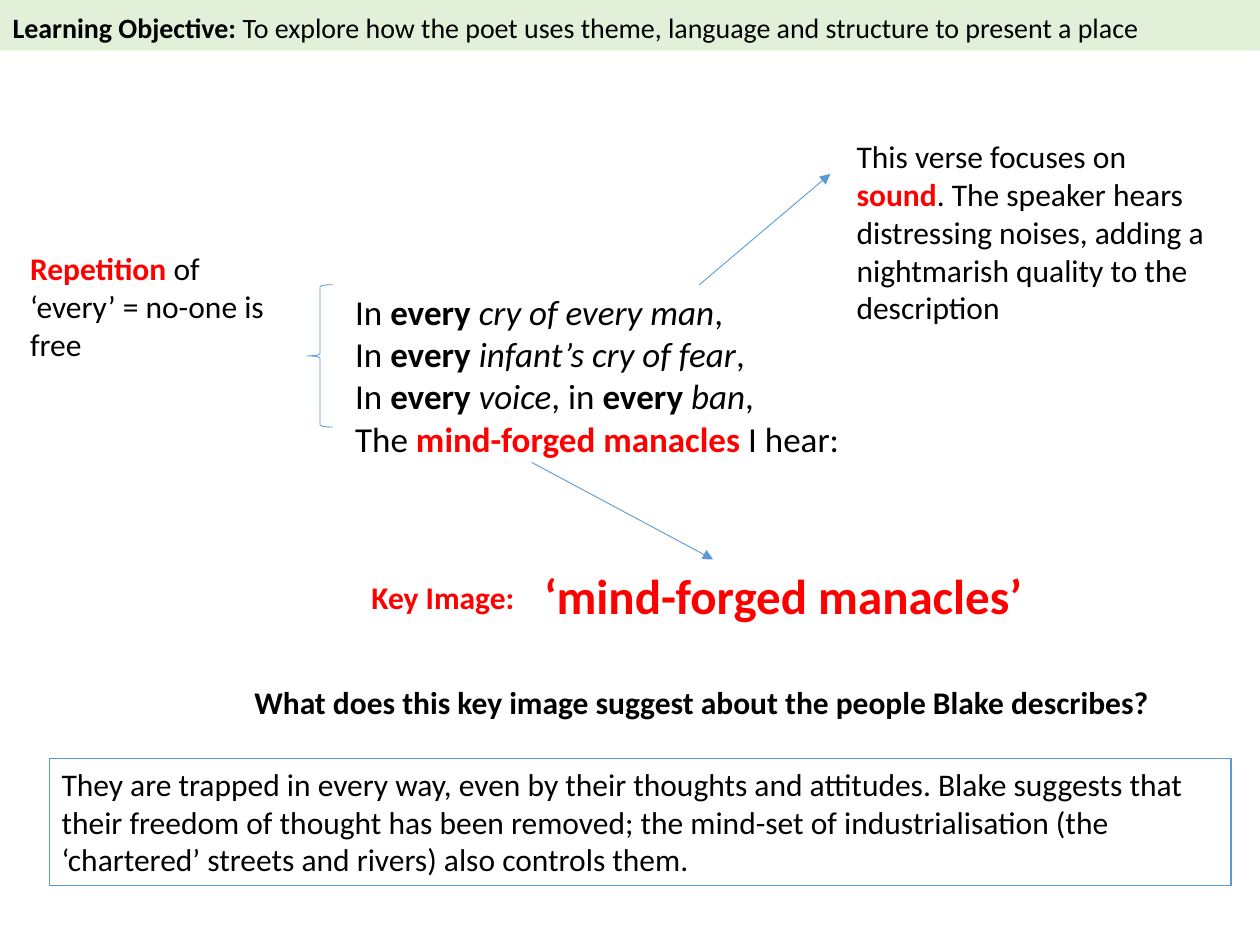
from lxml import etree
from pptx import Presentation
from pptx.dml.color import RGBColor
from pptx.enum.shapes import MSO_CONNECTOR, MSO_SHAPE
from pptx.enum.text import MSO_ANCHOR, MSO_AUTO_SIZE, PP_ALIGN
from pptx.oxml.ns import qn
from pptx.util import Inches, Pt

STRAIGHT = MSO_CONNECTOR.STRAIGHT
RECTANGLE, LEFT_BRACE = MSO_SHAPE.RECTANGLE, MSO_SHAPE.LEFT_BRACE
TOP, LEFT, NO_AUTOFIT = MSO_ANCHOR.TOP, PP_ALIGN.LEFT, MSO_AUTO_SIZE.NONE

FONT = "Calibri"
BLACK, RED, BLUE, PALE_GREEN = "000000", "FF0000", "5B9BD5", "E2F0D9"
TITLE_ONLY = 5

# Each run is (text, style): b = bold, i = italic, r = red.
OBJECTIVE = [[("Learning Objective: ", "b"),
              ("To explore how the poet uses theme, language and structure to present a place", "")]]
VERSE = [
    [("In ", ""), ("every ", "b"), ("cry of every man", "i"), (",", "")],
    [("In ", ""), ("every ", "b"), ("infant’s cry of fear", "i"), (",", "")],
    [("In ", ""), ("every ", "b"), ("voice", "i"), (", in ", ""),
     ("every ", "b"), ("ban", "i"), (",", "")],
    [("The ", ""), ("mind-forged manacles ", "br"), ("I hear:", "")],
]
REPETITION = [[("Repetition", "br"), (" of ‘every’ = no-one is free", "")]]
SOUND = [[("This verse focuses on ", ""), ("sound", "br"),
          (". The speaker hears distressing noises, adding a nightmarish quality "
           "to the description", "")]]
KEY_LABEL = [[("Key Image:", "br")]]
KEY_IMAGE = [[("‘mind-forged manacles’", "br")]]
QUESTION = [[("What does this key image suggest about the people Blake describes?", "b")]]
ANSWER = [[("They are trapped in every way, even by their thoughts and attitudes. "
            "Blake suggests that their freedom of thought has been removed; the mind-set "
            "of industrialisation (the ‘chartered’ streets and rivers) also controls them.", "")]]


def rgb(hex_colour):
    return RGBColor.from_string(hex_colour)


def write(shape, paragraphs, size):
    frame = shape.text_frame
    frame.word_wrap = True
    frame.auto_size = NO_AUTOFIT
    frame.vertical_anchor = TOP
    for index, runs in enumerate(paragraphs):
        paragraph = frame.add_paragraph() if index else frame.paragraphs[0]
        paragraph.alignment = LEFT
        for text, style in runs:
            run = paragraph.add_run()
            run.text = text
            run.font.name = FONT
            run.font.size = Pt(size)
            run.font.bold = "b" in style
            run.font.italic = "i" in style
            run.font.color.rgb = rgb(RED if "r" in style else BLACK)


def add_note(slide, box, paragraphs, size=18):
    write(slide.shapes.add_textbox(*map(Inches, box)), paragraphs, size)


def add_outline(slide, kind, box, weight):
    shape = slide.shapes.add_shape(kind, *map(Inches, box))
    shape.shadow.inherit = False
    shape.fill.background()
    shape.line.color.rgb = rgb(BLUE)
    shape.line.width = Pt(weight)
    return shape


def add_arrow(slide, start, end):
    arrow = slide.shapes.add_connector(STRAIGHT, *map(Inches, start + end))
    arrow.line.color.rgb = rgb(BLUE)
    arrow.line.width = Pt(0.5)
    etree.SubElement(arrow.line._get_or_add_ln(), qn("a:tailEnd"), type="triangle")
    etree.SubElement(arrow._element.spPr, qn("a:effectLst"))


def add_objective(slide, box):
    banner = slide.shapes.title
    banner.left, banner.top, banner.width, banner.height = map(Inches, box)
    banner.fill.solid()
    banner.fill.fore_color.rgb = rgb(PALE_GREEN)
    write(banner, OBJECTIVE, 16)
    banner.text_frame.margin_top = Inches(0.08)


def add_annotated_verse(slide, box):
    """Place the verse in the box, with its notes, brace and arrows around it."""
    left, top, width, height = box
    add_note(slide, box, VERSE, 20)
    add_outline(slide, LEFT_BRACE, (left - 0.28, top, 0.2, 1.13), 0.5)
    add_note(slide, (left - 2.58, top - 0.33, 2.25, 1.01), REPETITION)
    add_note(slide, (left + 3.98, top - 1.22, 2.97, 1.62), SOUND)
    add_arrow(slide, (left + 2.83, top), (left + 3.87, top - 0.88))
    add_arrow(slide, (left + 1.5, top + 1.41), (left + 2.94, top + 2.18))


def add_key_image(slide, box):
    left, top, width, height = box
    label_width = 1.37
    add_note(slide, (left, top + 0.1, 1.67, 0.4), KEY_LABEL)
    add_note(slide, (left + label_width, top, width - label_width, height), KEY_IMAGE, 28)


def add_discussion(slide, box):
    left, top, width, height = box
    answer_height = 1.01
    add_note(slide, (left + 1.53, top, 7.42, 0.4), QUESTION)
    answer_box = (left, top + height - answer_height, width, answer_height)
    write(add_outline(slide, RECTANGLE, answer_box, 0.75), ANSWER, 18)


def main():
    deck = Presentation()
    deck.slide_width, deck.slide_height = Inches(10), Inches(7.5)
    slide = deck.slides.add_slide(deck.slide_layouts[TITLE_ONLY])
    add_objective(slide, (0, 0, 10, 0.4))
    add_annotated_verse(slide, (2.72, 2.26, 5.66, 1.78))
    add_key_image(slide, (2.85, 4.44, 5.6, 0.57))
    add_discussion(slide, (0.39, 5.37, 9.38, 1.66))
    deck.save("out.pptx")


if __name__ == "__main__":
    main()
